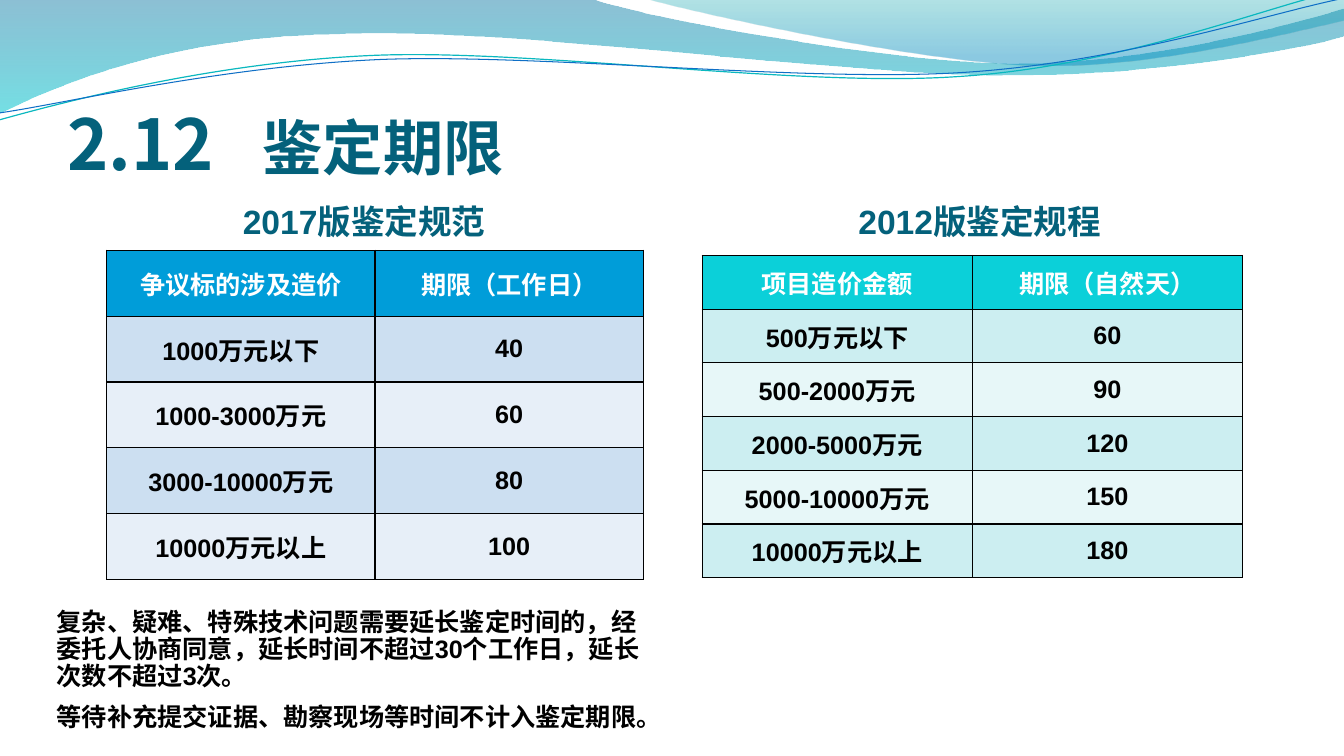
from math import cos, radians, sin

from lxml import etree
from pptx import Presentation
from pptx.dml.color import RGBColor
from pptx.enum.text import MSO_ANCHOR, MSO_AUTO_SIZE, PP_ALIGN
from pptx.oxml.ns import qn
from pptx.util import Pt

LEFT, MID = PP_ALIGN.LEFT, PP_ALIGN.CENTER
CENTER, BASE = MSO_ANCHOR.MIDDLE, MSO_ANCHOR.BOTTOM
FIXED = MSO_AUTO_SIZE.NONE
HAN, LATIN = "Noto Sans CJK SC", "Arial"
TEAL, BLACK, WHITE = "04617B", "000000", "FFFFFF"


def color(code):
    return RGBColor.from_string(code)


def node(parent, tag, **attrs):
    return etree.SubElement(parent, qn(tag), attrs)


class Deck:
    def __init__(self, wide, high):
        self.file = Presentation()
        self.file.slide_width, self.file.slide_height = Pt(wide), Pt(high)
        self.slide = self.file.slides.add_slide(self.file.slide_layouts[5])
        self.shapes = self.slide.shapes

    def outline(self, box, parts, close, turn=0):
        """Draw a start (2 numbers), lines (2) and cubic curves (6) in a box."""
        left, top, wide, high = box
        maker = self.shapes.build_freeform(Pt(left), Pt(top), scale=1.0)
        maker.add_line_segments([(Pt(left + wide), Pt(top + high))], close=close)
        shape = maker.convert_to_shape()
        shape.shadow.inherit = False
        shape.rotation = turn
        route = next(shape.element.spPr.iter(qn("a:path")))
        for child in list(route):
            route.remove(child)
        mx, my = left + wide / 2, top + high / 2
        c, s = cos(radians(turn)), sin(radians(turn))
        for i, part in enumerate(parts):
            tag = "a:cubicBezTo" if len(part) == 6 else "a:lnTo" if i else "a:moveTo"
            step = node(route, tag)
            for x, y in zip(part[::2], part[1::2]):
                dx, dy = x - mx, y - my
                node(step, "a:pt", x=str(Pt(dx * c + dy * s + wide / 2)),
                     y=str(Pt(dy * c - dx * s + high / 2)))
        if close:
            node(route, "a:close")
        return shape

    def band(self, box, parts, stops):
        shape = self.outline(box, parts, True)
        shape.line.fill.background()
        shape.fill.gradient()
        shape.fill.gradient_angle = 270
        for stop, (place, code, alpha) in zip(shape.fill.gradient_stops, stops):
            stop.position = place
            stop.color.rgb = color(code)
        tints = shape.element.spPr.iter(qn("a:srgbClr"))
        for tint, (place, code, alpha) in zip(tints, stops):
            node(tint, "a:alpha", val=str(alpha * 1000))

    def curve(self, box, parts, code, width):
        shape = self.outline(box, parts, False, 357.3)
        shape.fill.background()
        shape.line.color.rgb = color(code)
        shape.line.width = Pt(width)

    def run(self, para, text, size, code, font=LATIN):
        run = para.add_run()
        run.text = text
        look = {"size": Pt(size), "bold": True, "name": font}
        for key, value in look.items():
            setattr(run.font, key, value)
        run.font.color.rgb = color(code)
        node(run.font._element, "a:ea", typeface=HAN)

    def frame(self, shape, box, inset, anchor):
        for key, value in zip(("left", "top", "width", "height"), box):
            setattr(shape, key, Pt(value))
        frame = shape.text_frame
        for side, value in zip(("left", "top", "right", "bottom"), inset):
            setattr(frame, "margin_" + side, Pt(value))
        look = {"word_wrap": True, "auto_size": FIXED, "vertical_anchor": anchor}
        for key, value in look.items():
            setattr(frame, key, value)
        return frame

    def title(self, box, tab, runs):
        frame = self.frame(self.shapes.title, box, (0, 3.6, 0, 0), BASE)
        para = frame.paragraphs[0]
        para.alignment = LEFT
        tabs = node(para._p.get_or_add_pPr(), "a:tabLst")
        node(tabs, "a:tab", pos=str(Pt(tab)), algn="l")
        for text, size in runs:
            self.run(para, text, size, TEAL, HAN)

    def text(self, box, lines, size, code, inset, anchor, **look):
        shape = self.shapes.add_textbox(0, 0, 0, 0)
        frame = self.frame(shape, box, inset, anchor)
        for i, line in enumerate(lines):
            para = frame.add_paragraph() if i else frame.paragraphs[0]
            for key, value in look.items():
                setattr(para, key, value)
            self.run(para, line, size, code)

    def table(self, box, rows, head, bands):
        grid = self.shapes.add_table(len(rows), len(rows[0]), *map(Pt, box)).table
        for col in grid.columns:
            col.width = Pt(box[2] / len(rows[0]))
        for r, row in enumerate(rows):
            grid.rows[r].height = Pt(box[3] / len(rows))
            for c, text in enumerate(row):
                cell = grid.cell(r, c)
                cell.vertical_anchor = CENTER
                self.edges(cell)
                cell.fill.solid()
                cell.fill.fore_color.rgb = color(bands[(r - 1) % 2] if r else head)
                para = cell.text_frame.paragraphs[0]
                para.alignment = MID
                self.run(para, text, 18, BLACK if r else WHITE)

    def edges(self, cell):
        props = cell._tc.get_or_add_tcPr()
        for side in "LRTB":
            line = node(props, "a:ln" + side, w=str(Pt(1)))
            node(node(line, "a:solidFill"), "a:srgbClr", val=BLACK)


def main():
    deck = Deck(960, 540)

    # Waves along the top
    deck.band((-0.7, -0.7, 961.9, 82.1), [
        (0, 0), (422.6, -0.7), (456.5, 12.2, 637.2, 45.4, 727.9, 45.4),
        (819.4, 45.4, 920.2, 18.7, 959.8, 6.5), (961.2, 25.9),
        (943.9, 31.7, 835.2, 54.7, 715.7, 54),
        (596.9, 54, 366.5, 20.2, 247, 24.5),
        (123.1, 25.9, 43.9, 59.8, -0.7, 81.4), (0, 0),
    ], [(0, "0074A1", 45), (1, "00C6CF", 55)])
    deck.band((460.1, -0.7, 499.7, 50.4), [
        (460.1, -0.7), (488.9, 7.9, 654.5, 44.6, 738, 46.8),
        (821.5, 49.7, 923, 23, 959.8, 15.1), (959.8, 0), (460.1, -0.7),
    ], [(0, "00A1A9", 30), (0.8, "008BBF", 45)])
    deck.curve((-2.2, 15.8, 961.9, 51.1), [
        (-0.7, 85.7), (46.1, 72.7, 151.9, 44.6, 265.7, 39.6),
        (379.4, 34.6, 568.8, 62.6, 684, 54.7),
        (799.2, 47.5, 901.4, 5.8, 958.3, -7.2),
    ], "0AB8BF", 0.85)
    deck.curve((-1.4, 21.6, 963.4, 41.8), [
        (0, 80.6), (45.4, 74.2, 157, 47.5, 272.2, 42.5),
        (386.6, 38.2, 573.1, 59, 687.6, 51.8),
        (802.8, 44.6, 903.6, 10.1, 960.5, -1.4),
    ], "0F6FC6", 0.75)

    # Title and table headings
    deck.title((48, 55.5, 864, 76.5), 139.7, [("2.12\t", 50), ("鉴定期限", 43)])
    for left, text in ((48, "2017版鉴定规范"), (487.7, "2012版鉴定规程")):
        deck.text((left, 146.2, 424.3, 51.8), [text], 24, TEAL,
                  (3.6, 0, 3.6, 28.4), CENTER, alignment=MID)

    # Time limits in the two editions
    deck.table((76.2, 178.8, 383.4, 235), [
        ("争议标的涉及造价", "期限（工作日）"),
        ("1000万元以下", "40"),
        ("1000-3000万元", "60"),
        ("3000-10000万元", "80"),
        ("10000万元以上", "100"),
    ], "009DD9", ("CCDFF1", "E7EFF8"))
    deck.table((501.5, 182.4, 386, 230.3), [
        ("项目造价金额", "期限（自然天）"),
        ("500万元以下", "60"),
        ("500-2000万元", "90"),
        ("2000-5000万元", "120"),
        ("5000-10000万元", "150"),
        ("10000万元以上", "180"),
    ], "0BD0D9", ("CCEEF1", "E7F7F8"))

    # Notes on extensions
    deck.text((33.5, 412.1, 434.2, 114.5), [
        "复杂、疑难、特殊技术问题需要延长鉴定时间的，经委托人协商同意，"
        "延长时间不超过30个工作日，延长次数不超过3次。",
        "等待补充提交证据、勘察现场等时间不计入鉴定期限。",
    ], 18, BLACK, (7.2, 3.6, 7.2, 3.6), BASE,
        line_spacing=0.9, space_before=Pt(10))

    deck.file.save("out.pptx")


if __name__ == "__main__":
    main()
